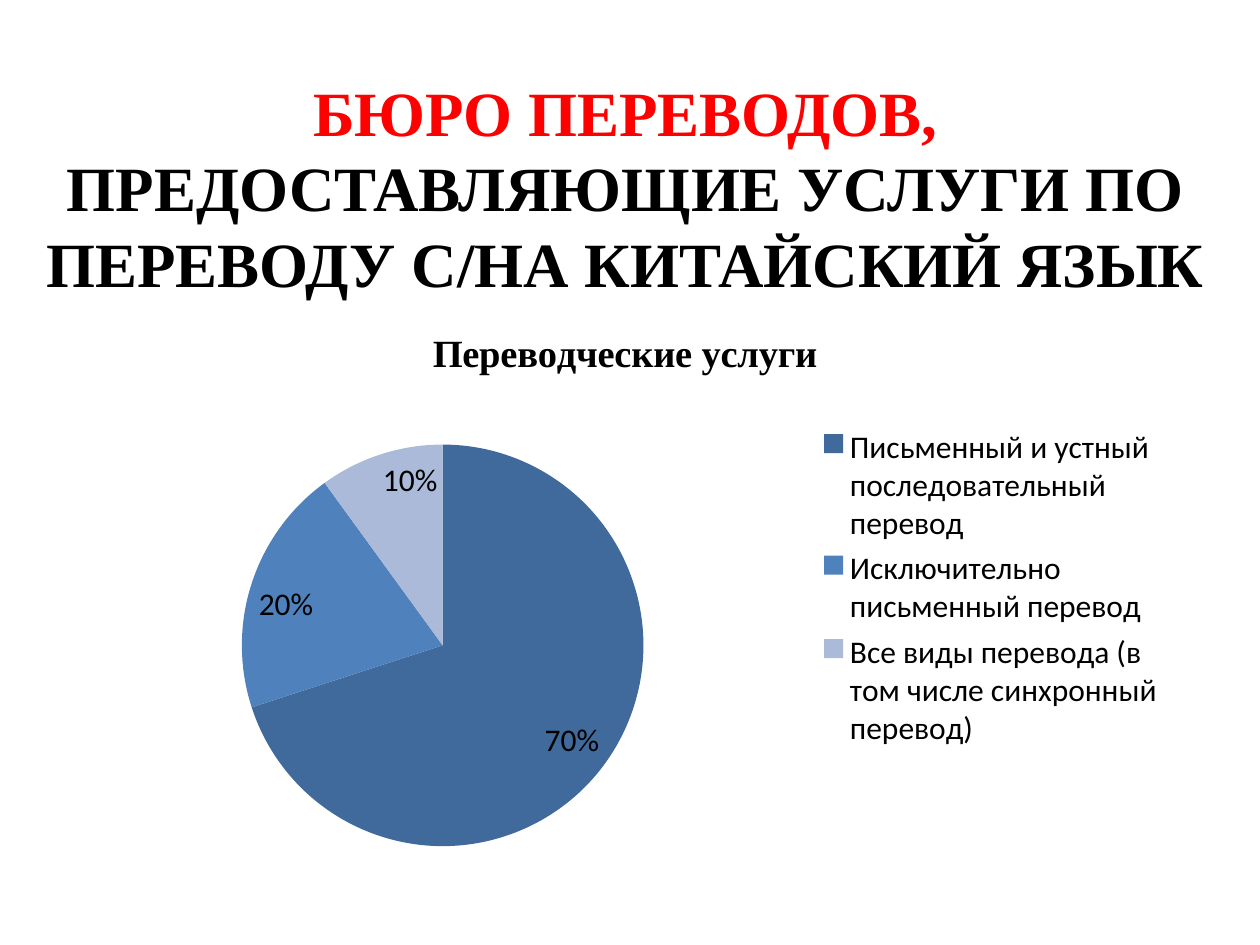
from lxml import etree
from pptx import Presentation
from pptx.chart.data import CategoryChartData
from pptx.dml.color import RGBColor
from pptx.enum.chart import XL_CHART_TYPE, XL_LABEL_POSITION, XL_LEGEND_POSITION
from pptx.enum.text import MSO_ANCHOR, PP_ALIGN
from pptx.oxml import parse_xml
from pptx.oxml.ns import nsdecls
from pptx.util import Inches, Pt

PIE = XL_CHART_TYPE.PIE
INSIDE_END = XL_LABEL_POSITION.INSIDE_END
RIGHT = XL_LEGEND_POSITION.RIGHT
MIDDLE = MSO_ANCHOR.MIDDLE
CENTER = PP_ALIGN.CENTER

HEADING_FONT, CHART_FONT = "Times New Roman", "Calibri"
BLACK = "000000"
HEADING = [
    ("БЮРО ПЕРЕВОДОВ, ", "FF0000"),
    ("ПРЕДОСТАВЛЯЮЩИЕ УСЛУГИ ПО ПЕРЕВОДУ С/НА КИТАЙСКИЙ ЯЗЫК", BLACK),
]
CHART_TITLE = "Переводческие услуги"
SERVICES = [
    ("Письменный и устный последовательный перевод", 70, "406A9B"),
    ("Исключительно письменный перевод", 20, "4F81BD"),
    ("Все виды перевода (в том числе синхронный перевод)", 10, "ABBAD8"),
]
HEADING_BOX = (0.2, 0.52, 9.53, 1.92)
CHART_BOX = (0.59, 2.41, 8.74, 4.44)
PIE_BOX = (1.92, 3.53, 3.19, 3.19)
LEGEND_BOX = (6.46, 3.34, 2.8, 2.65)


def rgb(value):
    return RGBColor.from_string(value)


def style(font, name, size, color, bold=False):
    font.name = name
    font.size = Pt(size)
    font.color.rgb = rgb(color)
    font.bold = bold


def manual_layout(box, inner=False):
    left, top, width, height = CHART_BOX
    x, y, w, h = box
    values = {
        "xMode": "edge", "yMode": "edge",
        "x": (x - left) / width, "y": (y - top) / height,
        "w": w / width, "h": h / height,
    }
    layout = parse_xml(f"<c:layout {nsdecls('c')}><c:manualLayout/></c:layout>")
    if inner:
        values = {"layoutTarget": "inner", **values}
    for tag, value in values.items():
        item = etree.SubElement(layout[0], f"{{{layout.nsmap['c']}}}{tag}")
        item.set("val", value if isinstance(value, str) else f"{value:.3f}")
    return layout


def add_heading(slide):
    title = slide.shapes.title
    title.left, title.top, title.width, title.height = map(Inches, HEADING_BOX)
    frame = title.text_frame
    frame.word_wrap = True
    frame.vertical_anchor = MIDDLE
    paragraph = frame.paragraphs[0]
    paragraph.alignment = CENTER
    for text, color in HEADING:
        run = paragraph.add_run()
        run.text = text
        style(run.font, HEADING_FONT, 36, color, True)


def add_services_chart(slide):
    data = CategoryChartData(number_format="0")
    data.categories = [name for name, _, _ in SERVICES]
    data.add_series("Series 1", [share for _, share, _ in SERVICES])
    chart = slide.shapes.add_chart(PIE, *map(Inches, CHART_BOX), data).chart
    style(chart.font, CHART_FONT, 18, BLACK)

    chart.has_title = True
    run = chart.chart_title.text_frame.paragraphs[0].add_run()
    run.text = CHART_TITLE
    style(run.font, HEADING_FONT, 22, BLACK, True)
    chart.chart_title.include_in_layout = False

    plot = chart.plots[0]
    plot.vary_by_categories = True
    for index, (_, _, color) in enumerate(SERVICES):
        fill = plot.series[0].points[index].format.fill
        fill.solid()
        fill.fore_color.rgb = rgb(color)

    plot.has_data_labels = True
    labels = plot.data_labels
    labels.show_percentage = True
    labels.show_value = False
    labels.number_format = "0%"
    labels.number_format_is_linked = False
    labels.position = INSIDE_END
    style(labels.font, CHART_FONT, 18, BLACK)

    chart.has_legend = True
    legend = chart.legend
    legend.position = RIGHT
    legend.include_in_layout = False
    style(legend.font, CHART_FONT, 18, BLACK)

    for parent, layout in (
        (chart.element.find(".//{*}plotArea"), manual_layout(PIE_BOX, True)),
        (chart.element.find(".//{*}legend"), manual_layout(LEGEND_BOX)),
    ):
        current = parent.find("{*}layout")
        if current is not None:
            parent.remove(current)
        position = parent.find("{*}legendPos")
        if position is None:
            parent.insert(0, layout)
        else:
            position.addnext(layout)


def main():
    deck = Presentation()
    deck.slide_width, deck.slide_height = Inches(10), Inches(7.5)
    slide = deck.slides.add_slide(deck.slide_layouts[5])
    add_heading(slide)
    add_services_chart(slide)
    deck.save("out.pptx")


if __name__ == "__main__":
    main()
